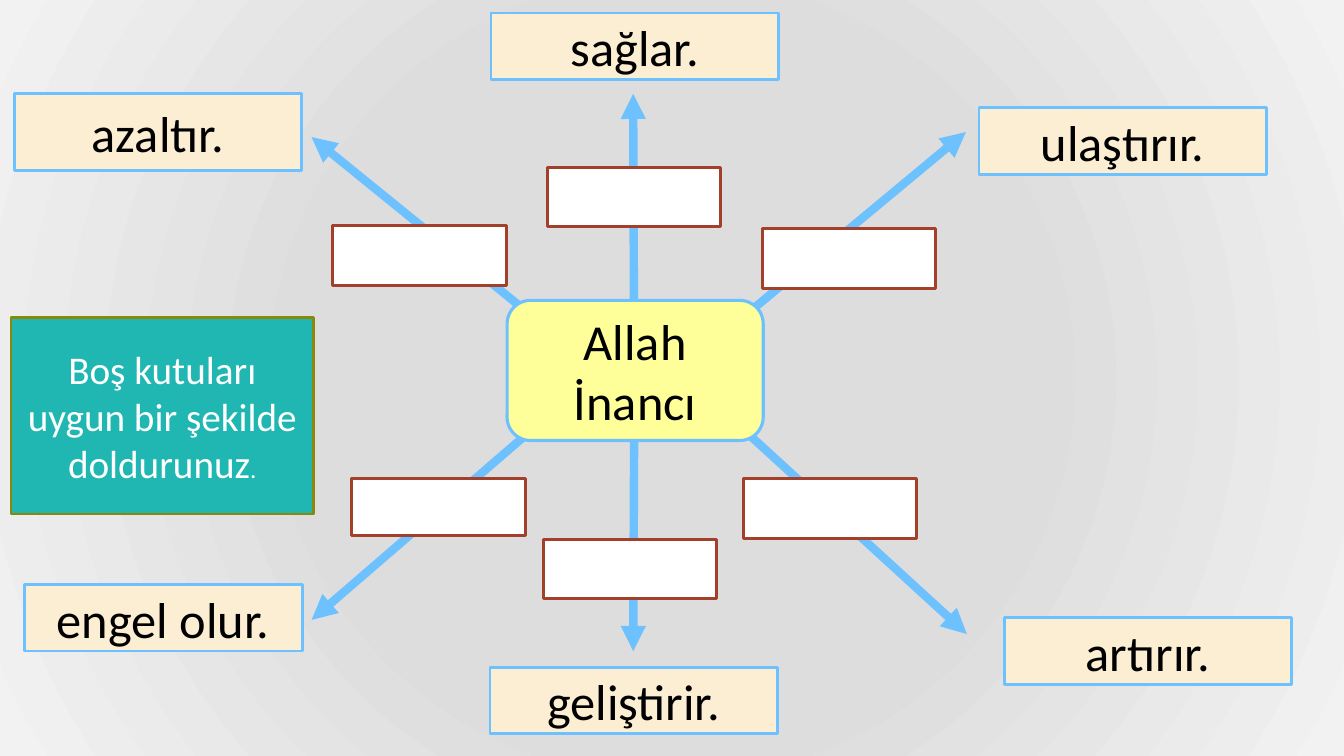
from dataclasses import dataclass

from lxml import etree
from pptx import Presentation
from pptx.dml.color import RGBColor
from pptx.enum.shapes import MSO_CONNECTOR, MSO_SHAPE
from pptx.enum.text import MSO_ANCHOR, PP_ALIGN
from pptx.oxml.ns import qn
from pptx.util import Pt

RECTANGLE = MSO_SHAPE.RECTANGLE
ROUNDED = MSO_SHAPE.ROUNDED_RECTANGLE
STRAIGHT = MSO_CONNECTOR.STRAIGHT
MIDDLE = MSO_ANCHOR.MIDDLE
CENTER = PP_ALIGN.CENTER
EMU_PER_PX = 9144
SLIDE_WIDTH, SLIDE_HEIGHT = 1333, 750


@dataclass(frozen=True)
class Theme:
    font: str = "Calibri"
    background_center: str = "DDDDDD"
    background_edge: str = "F2F2F2"
    sky: str = "6DC1FF"
    cream: str = "FCEED3"
    yellow: str = "FFFF99"
    teal: str = "20B7B2"
    olive: str = "8A880A"
    brick: str = "A3402C"
    white: str = "FFFFFF"
    black: str = "000000"
    label_size: int = 36
    note_size: int = 28
    full_stop_size: int = 18
    outline: float = 2
    hub_outline: float = 2.25
    arrow: float = 6


THEME = Theme()

OUTCOMES = [
    ("azaltır.", (14, 93, 285, 76)),
    ("sağlar.", (487, 13, 285, 66)),
    ("ulaştırır.", (971, 107, 285, 66)),
    ("artırır.", (996, 613, 285, 66)),
    ("geliştirir.", (486, 662, 285, 66)),
    ("engel olur.", (24, 580, 276, 66)),
]

BRANCHES = [
    ((537, 321), (309, 136), (330, 224, 172, 59)),
    ((629, 371), (628, 93), (543, 166, 172, 59)),
    ((721, 328), (958, 131), (756, 227, 172, 59)),
    ((723, 413), (959, 629), (737, 475, 172, 59)),
    ((629, 425), (628, 646), (539, 535, 172, 59)),
    ((543, 413), (309, 615), (349, 475, 172, 56)),
]


def px(*lengths):
    return [length * EMU_PER_PX for length in lengths]


def color(value):
    return RGBColor.from_string(value)


def add_box(shapes, box, fill, line, kind=RECTANGLE, outline=THEME.outline):
    shape = shapes.add_shape(kind, *px(*box))
    shape.shadow.inherit = False
    shape.fill.solid()
    shape.fill.fore_color.rgb = color(fill)
    shape.line.color.rgb = color(line)
    shape.line.width = Pt(outline)
    return shape


def style_run(run, size, font_color):
    run.font.name = THEME.font
    run.font.size = Pt(size)
    run.font.color.rgb = color(font_color)


def write(shape, text, size, font_color):
    frame = shape.text_frame
    frame.word_wrap = True
    frame.vertical_anchor = MIDDLE
    frame.text = text
    paragraph = frame.paragraphs[0]
    paragraph.alignment = CENTER
    style_run(paragraph.runs[0], size, font_color)
    return paragraph


def paint_background(slide):
    fill = slide.background.fill
    fill.gradient()
    stops = zip(fill.gradient_stops, (0.47, 1),
                (THEME.background_center, THEME.background_edge))
    for stop, position, value in stops:
        stop.position = position
        stop.color.rgb = color(value)
    gradient = slide.background._cSld.find(".//" + qn("a:gradFill"))
    linear = gradient.find(qn("a:lin"))
    circle = etree.Element(qn("a:path"), {"path": "circle"})
    etree.SubElement(circle, qn("a:fillToRect"), dict.fromkeys("ltrb", "50000"))
    gradient.replace(linear, circle)


def add_outcome(slide, text, box):
    shape = add_box(slide.shapes, box, THEME.cream, THEME.sky)
    write(shape, text, THEME.label_size, THEME.black)


def add_branch(slide, start, end, blank_box):
    group = slide.shapes.add_group_shape()
    arrow = group.shapes.add_connector(STRAIGHT, *px(*start, *end))
    arrow.line.color.rgb = color(THEME.sky)
    arrow.line.width = Pt(THEME.arrow)
    etree.SubElement(arrow.line._get_or_add_ln(), qn("a:tailEnd"), type="triangle")
    etree.SubElement(arrow._element.spPr, qn("a:effectLst"))
    add_box(group.shapes, blank_box, THEME.white, THEME.brick)


def add_hub(slide, box):
    hub = add_box(slide.shapes, box, THEME.yellow, THEME.sky, ROUNDED, THEME.hub_outline)
    write(hub, "Allah İnancı", THEME.label_size, THEME.black)


def add_instruction(slide, box):
    note = add_box(slide.shapes, box, THEME.teal, THEME.olive)
    paragraph = write(note, "Boş kutuları uygun bir şekilde doldurunuz",
                      THEME.note_size, THEME.white)
    full_stop = paragraph.add_run()
    full_stop.text = "."
    style_run(full_stop, THEME.full_stop_size, THEME.white)


def main():
    presentation = Presentation()
    presentation.slide_width, presentation.slide_height = px(SLIDE_WIDTH, SLIDE_HEIGHT)
    slide = presentation.slides.add_slide(presentation.slide_layouts[6])
    paint_background(slide)
    for text, box in OUTCOMES:
        add_outcome(slide, text, box)
    for start, end, blank_box in BRANCHES:
        add_branch(slide, start, end, blank_box)
    add_hub(slide, (503, 298, 254, 139))
    add_instruction(slide, (11, 315, 300, 195))
    presentation.save("out.pptx")


if __name__ == "__main__":
    main()
